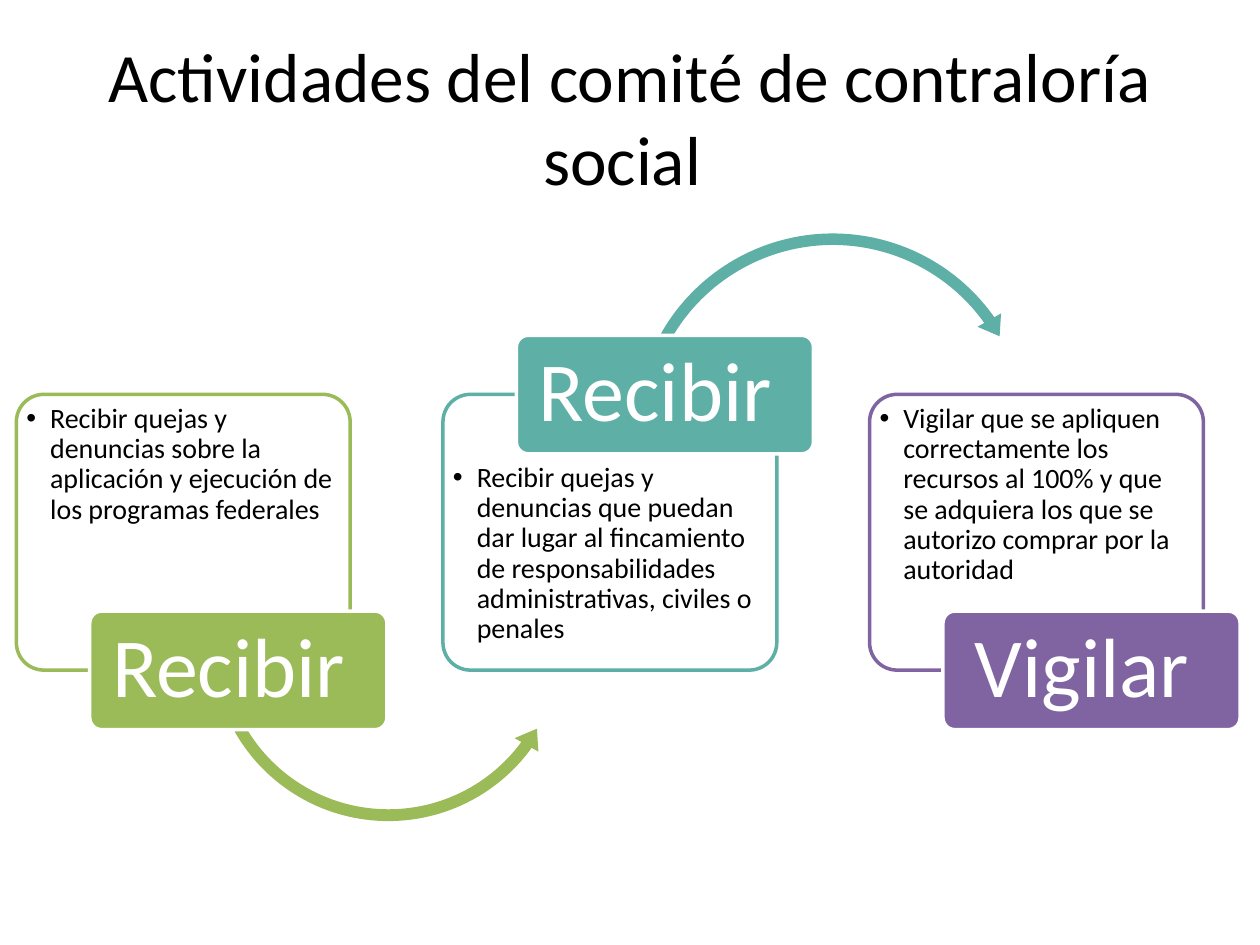
from dataclasses import dataclass

from lxml import etree
from pptx import Presentation
from pptx.dml.color import RGBColor
from pptx.enum.shapes import MSO_SHAPE
from pptx.enum.text import MSO_ANCHOR, PP_ALIGN
from pptx.oxml.ns import qn
from pptx.util import Cm, Pt

ROUND = MSO_SHAPE.ROUNDED_RECTANGLE
ARC = MSO_SHAPE.CIRCULAR_ARROW
LEFT_ARC = MSO_SHAPE.LEFT_CIRCULAR_ARROW
TOP, MIDDLE = MSO_ANCHOR.TOP, MSO_ANCHOR.MIDDLE
LEFT, CENTER = PP_ALIGN.LEFT, PP_ALIGN.CENTER


@dataclass(frozen=True)
class Theme:
    font: str = "Calibri"
    ink: str = "000000"
    paper: str = "FFFFFF"
    green: str = "9BBB59"
    teal: str = "5EAFA6"
    violet: str = "8064A2"
    title: float = 39.6
    label: float = 48
    body: float = 16
    line: float = 2


THEME = Theme()

# Column grid, in centimetres
START, STEP = 0.33, 8.6
CARD_TOP, CARD_W, CARD_H = 7.95, 6.73, 5.56
BADGE_IN, BADGE_W, BADGE_H = 1.48, 5.99, 2.39
BADGE_LOW, BADGE_HIGH = 12.32, 6.76

# Label, body, colour, badge on top, arrow to the next step
STEPS = [
    ("Recibir ",
     "Recibir quejas y denuncias sobre la aplicación y ejecución de los "
     "programas federales",
     THEME.green, False,
     (LEFT_ARC, 4.11, 9.27, 7.44, (0.032, 3.877, 21.632, 90.245, 0.037))),
    ("Recibir ",
     "Recibir quejas y denuncias que puedan dar lugar al fincamiento de "
     "responsabilidades administrativas, civiles o penales",
     THEME.teal, True,
     (ARC, 12.65, 4.55, 8.28, (0.028, 3.447, 194.798, 125.755, 0.033))),
    ("Vigilar ",
     "Vigilar que se apliquen correctamente los recursos al 100% y que se "
     "adquiera los que se autorizo comprar por la autoridad",
     THEME.violet, False, None),
]


def write(shape, text, size, color, align=CENTER, anchor=MIDDLE,
          pad=(0.25, 0.13), space=None, bullet=False):
    """Fill a shape with one paragraph; pad is (sides, top) in centimetres."""
    frame = shape.text_frame
    frame.word_wrap = True
    frame.vertical_anchor = anchor
    frame.margin_left = frame.margin_right = Cm(pad[0])
    frame.margin_top = Cm(pad[1])
    frame.margin_bottom = Cm(min(pad))
    para = frame.paragraphs[0]
    para.alignment = align
    if space:
        para.line_spacing = space
    if bullet:
        props = para._p.get_or_add_pPr()
        props.set("marL", str(Cm(0.48)))
        props.set("indent", str(-Cm(0.48)))
        etree.SubElement(props, qn("a:buFont")).set("typeface", "Arial")
        etree.SubElement(props, qn("a:buChar")).set("char", "•")
    run = para.add_run()
    run.text = text
    run.font.name = THEME.font
    run.font.size = Pt(size)
    run.font.color.rgb = RGBColor.from_string(color)


class Deck:
    def __init__(self, theme):
        self.theme = theme
        self.file = Presentation()
        self.file.slide_width, self.file.slide_height = Cm(25.4), Cm(19.05)
        self.slide = self.file.slides.add_slide(self.file.slide_layouts[6])

    def shape(self, kind, box, adjust, fill, line=None):
        item = self.slide.shapes.add_shape(kind, *map(Cm, box))
        item.shadow.inherit = False
        for i, value in enumerate(adjust):
            item.adjustments[i] = value
        item.fill.solid()
        item.fill.fore_color.rgb = RGBColor.from_string(fill)
        if line:
            item.line.color.rgb = RGBColor.from_string(line)
            item.line.width = Pt(self.theme.line)
        else:
            item.line.fill.background()
        return item

    def title(self, text):
        box = self.slide.shapes.add_textbox(
            Cm(1.27), Cm(0.76), Cm(22.86), Cm(3.18))
        write(box, text, self.theme.title, self.theme.ink)

    def card(self, left, text, color, high):
        box = self.shape(ROUND, (left, CARD_TOP, CARD_W, CARD_H), [0.1],
                         self.theme.paper, color)
        write(box, text, self.theme.body, self.theme.ink, align=LEFT,
              anchor=TOP, pad=(0.04, 1.23 if high else 0.04),
              space=0.9, bullet=True)

    def arrow(self, kind, left, top, size, adjust, color):
        self.shape(kind, (left, top, size, size), adjust, color)

    def badge(self, left, text, color, high):
        top = BADGE_HIGH if high else BADGE_LOW
        box = self.shape(ROUND, (left + BADGE_IN, top, BADGE_W, BADGE_H),
                         [0.1], color, self.theme.paper)
        write(box, text, self.theme.label, self.theme.paper,
              pad=(0.25, 0.18), space=0.9)


def main():
    deck = Deck(THEME)
    deck.title("Actividades del comité de contraloría social ")
    for i, (label, body, color, high, arrow) in enumerate(STEPS):
        left = START + i * STEP
        deck.card(left, body, color, high)
        if arrow:
            deck.arrow(*arrow, color)
        deck.badge(left, label, color, high)
    deck.file.save("out.pptx")


if __name__ == "__main__":
    main()
